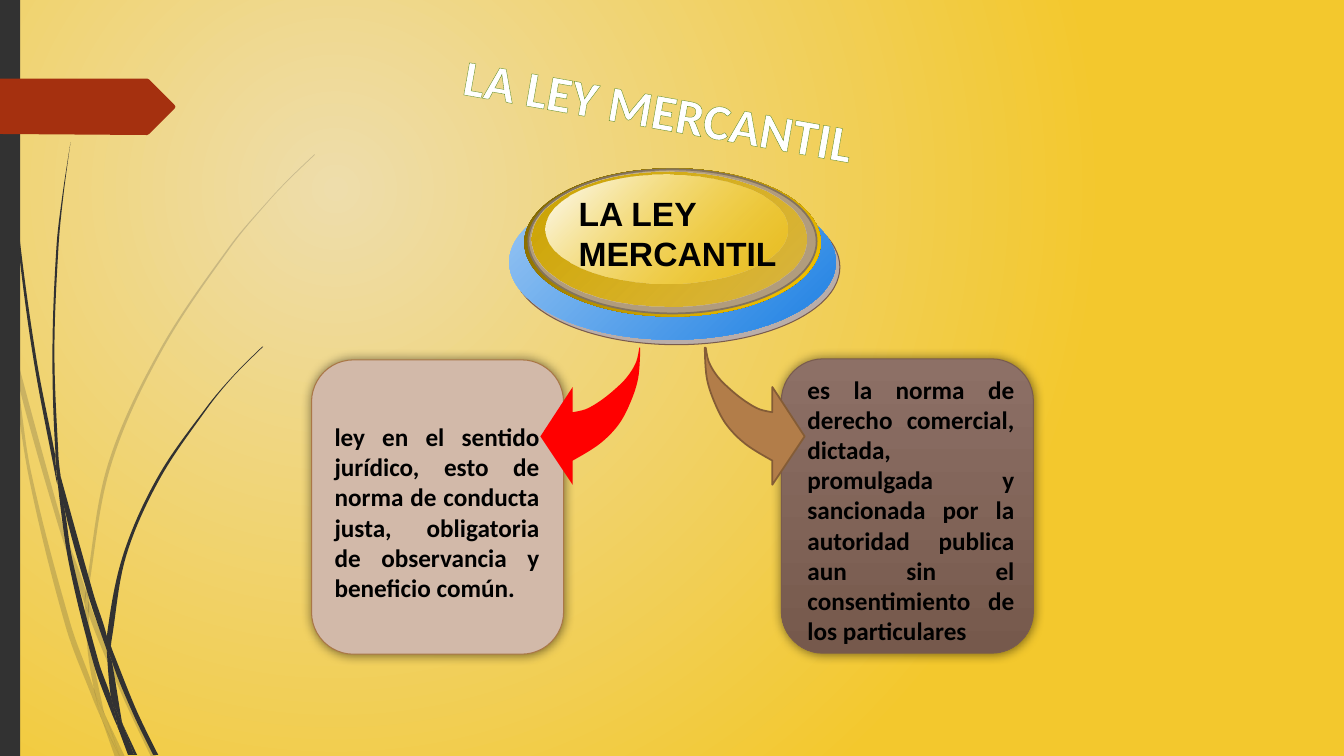
"""Build the slide about the mercantile law."""
from dataclasses import dataclass
from math import hypot

from lxml import etree
from pptx import Presentation, util as u
from pptx.dml.color import RGBColor
from pptx.enum import shapes, text
from pptx.oxml import parse_xml
from pptx.oxml.ns import nsdecls, qn

COLORS = {
    "cream": "EEDDAB", "yellow": "F3C82D", "charcoal": "323232", "rust": "A5300F",
    "white": "FFFFFF", "black": "000000", "lime": "BCF86A", "moss": "5F8A1E",
    "cocoa": "8D7066", "dark cocoa": "76594C", "cocoa line": "795B4E", "sand": "D2B9A9",
    "sand line": "AA7746", "red": "FF0000", "bronze": "B27D49", "bronze line": "845C36",
    "gray": "B9ADA9", "sky": "9BC7F3", "blue": "1D80E3", "olive": "765E00",
    "gold": "FFCC00", "tan": "B19C7D", "tan line": "83735C", "ochre": "CAA200",
}
PRESET = shapes.MSO_SHAPE
ALIGN = text.PP_ALIGN
ARROW_AXIS = 6.67
Point = tuple[float, float]


@dataclass(frozen=True)
class Paint:
    fill: tuple[str, ...]
    line: str = ""
    line_width: float = 0.75
    angle: int = 45
    opacity: int = 100


@dataclass(frozen=True)
class Box:
    left: float
    top: float
    width: float
    height: float

    def lengths(self) -> list[int]:
        return [u.Inches(v) for v in (self.left, self.top, self.width, self.height)]


@dataclass(frozen=True)
class Label:
    box: Box
    lines: tuple[str, ...]
    size: int
    font: str = "Calibri"
    color: str = "black"
    align: ALIGN = ALIGN.JUSTIFY
    wrap: bool = True
    rotation: float = 0


@dataclass(frozen=True)
class Card:
    box: Box
    paint: Paint
    label: Label


PALE_GRASS = (
    ((.11, 3.5), (.09, 3.22), (0, 2.82), (0, 2.99), (.1, 3.44)),
    ((.58, 5.22), (.84, 5.99), (.85, 5.86), (.62, 5.2), (.14, 3.45), (.17, 3.76)),
    ((.92, 6.07), (.88, 5.96), (.88, 6.1), (1.23, 6.94), (1.5, 7.51), (1.55, 7.51), (1.27, 6.92)),
    ((1.19, 7.51), (1.24, 7.51), (1.05, 7.11)),
    ((.93, 6.83), (.7, 6.19), (.31, 4.69), (.17, 3.76), (.11, 3.5), (.28, 4.7), (.65, 6.21),
     (.92, 6.93), (1.01, 7.14), (.99, 7.07)),
    ((.84, 5.99), (.87, 6.46), (.93, 6.83), (.96, 6.92), (1.05, 7.11), (1.03, 7.06), (.91, 6.46),
     (.88, 6.1), (.88, 6.08)),
    ((.88, 5.84), (1.1, 4.62), (1.6, 3.49), (2.29, 2.45), (2.68, 1.98), (2.9, 1.75), (3.12, 1.54),
     (3.12, 1.53), (2.89, 1.75), (2.68, 1.97), (2.28, 2.44), (1.58, 3.48), (1.07, 4.61),
     (.85, 5.84), (.85, 5.86), (.88, 5.96)),
    ((1.01, 7.14), (1.14, 7.51), (1.19, 7.51)),
    ((.88, 6.08), (.88, 6.1), (.88, 5.96), (.85, 5.86), (.84, 5.99)),
    ((.96, 6.92), (.93, 6.83), (.99, 7.07), (1.01, 7.14), (1.19, 7.51), (1.05, 7.11)),
)
DARK_GRASS = (
    ((.07, 1.1), (.17, 2.33), (.33, 3.55), (.56, 4.77), (.57, 4.81), (.55, 4.57), (.55, 4.53),
     (.36, 3.55), (.19, 2.32), (.08, 1.09), (.05, .48), (.04, 0), (.03, 0), (.04, .48)),
    ((.88, 5.92), (1.06, 6.45), (1.06, 6.31), (.93, 5.9), (.6, 4.72), (.64, 5.05)),
    ((1.13, 6.49), (1.1, 6.41), (1.11, 6.56), (1.32, 7.08), (1.52, 7.49), (1.57, 7.49),
     (1.36, 7.06)),
    ((1.1, 6.91), (.98, 6.57), (.72, 5.56), (.64, 5.05), (.57, 4.77), (.68, 5.57), (.93, 6.59),
     (1.11, 7.08), (1.17, 7.22), (1.16, 7.17)),
    ((.6, 4.72), (.58, 4.53), (.54, 3.49), (.58, 2.45), (.63, 1.93), (.7, 1.41), (.62, 1.93),
     (.56, 2.45), (.52, 3.49), (.55, 4.49)),
    ((1.33, 7.49), (1.36, 7.49), (1.22, 7.19)),
    ((.57, 4.77), (.64, 5.05), (.6, 4.72), (.55, 4.49), (.55, 4.53)),
    ((1.11, 6.33), (1.25, 5.52), (1.58, 4.76), (2.05, 4.06), (2.31, 3.74), (2.61, 3.44),
     (2.6, 3.44), (2.31, 3.73), (2.04, 4.05), (1.56, 4.74), (1.22, 5.51), (1.06, 6.31), (1.1, 6.41)),
    ((1.17, 7.22), (1.27, 7.49), (1.31, 7.49)),
    ((1.06, 6.45), (1.1, 6.91), (1.16, 7.06), (1.22, 7.19), (1.21, 7.16), (1.11, 6.56), (1.09, 6.51)),
    ((1.06, 6.45), (1.09, 6.51), (1.11, 6.56), (1.1, 6.41), (1.06, 6.31)),
    ((1.16, 7.06), (1.1, 6.91), (1.16, 7.17), (1.17, 7.22), (1.3, 7.49), (1.33, 7.49), (1.22, 7.19)),
)
TAG = ((1.74, 1.06), (1.73, 1.08), (1.48, 1.33), (1.46, 1.34), (0, 1.33), (0, .78), (1.46, .78),
       (1.48, .79), (1.73, 1.04))
LEFT_ARROW = (
    (6.35, 3.45), (6.33, 3.75), (6.25, 4), (6.13, 4.22), (5.94, 4.41), (5.68, 4.57), (5.68, 4.81),
    (5.36, 4.33), (5.68, 3.84), (5.68, 4.09), (5.81, 4.06), (5.95, 3.98), (6.09, 3.87),
    (6.22, 3.74), (6.31, 3.59), (6.34, 3.45))
RIGHT_ARROW = tuple((2 * ARROW_AXIS - x, y) for x, y in LEFT_ARROW)
TITLE = Label(Box(2.32, .73, 8.42, .71), ("LA LEY MERCANTIL",), 36, color="white",
              align=ALIGN.CENTER, rotation=10)
CARDS = (
    Card(Box(7.75, 3.56, 2.5, 2.92), Paint(("cocoa", "dark cocoa"), "cocoa line", angle=90),
         Label(Box(7.91, 3.66, 2.25, 2.83),
               ("es la norma de derecho comercial, dictada, promulgada y sancionada por la "
                "autoridad publica aun sin el consentimiento de los particulares",), 18)),
    Card(Box(3.09, 3.57, 2.5, 2.92), Paint(("sand",), "sand line"),
         Label(Box(3.22, 4.13, 2.23, 2.15),
               ("ley en el sentido jurídico, esto de norma de conducta justa, obligatoria "
                "de observancia y beneficio común.",), 18)),
)
BUTTON = (
    (Box(5.09, 1.88, 3.24, 1.54), Paint(("gray",), "cocoa line")),
    (Box(5.05, 1.83, 3.24, 1.54), Paint(("sky", "blue"))),
    (Box(5.2, 1.67, 2.94, 1.47), Paint(("olive", "gold"))),
    (Box(5.24, 1.68, 2.86, 1.43), Paint(("tan",), "tan line", 1.25)),
    (Box(5.27, 1.7, 2.73, 1.34), Paint(("ochre", "gold"), opacity=48)),
    (Box(5.41, 1.73, 2.4, 1.08), Paint(("white", "gold"), opacity=38)),
)
BUTTON_LABEL = Label(Box(5.64, 1.86, 2.18, 1.14), ("LA LEY", "MERCANTIL"), 24, "Arial",
                     align=ALIGN.LEFT, wrap=False)


def rgb(name: str) -> RGBColor:
    return RGBColor.from_string(COLORS[name])


def set_gradient(fill, names: tuple[str, ...]) -> None:
    fill.gradient()
    for stop, name in zip(fill.gradient_stops, names):
        stop.color.rgb = rgb(name)


def apply_paint(shape, paint: Paint) -> None:
    shape.shadow.inherit = False
    if len(paint.fill) > 1:
        set_gradient(shape.fill, paint.fill)
        shape.fill.gradient_angle = 360 - paint.angle
    else:
        shape.fill.solid()
        shape.fill.fore_color.rgb = rgb(paint.fill[0])
    if paint.opacity < 100:
        last_color = shape.element.xpath("./p:spPr//a:srgbClr")[-1]
        etree.SubElement(last_color, qn("a:alpha")).set("val", str(paint.opacity * 1000))
    if paint.line:
        shape.line.color.rgb = rgb(paint.line)
        shape.line.width = u.Pt(paint.line_width)
    else:
        shape.line.fill.background()


def add_preset(slide, preset: PRESET, box: Box, paint: Paint):
    shape = slide.shapes.add_shape(preset, *box.lengths())
    apply_paint(shape, paint)
    return shape


def handle(before: Point, here: Point, after: Point, sign: int) -> Point:
    """Return the control point beside an anchor; sharp corners get none."""
    (ax, ay), (bx, by) = ((here[k] - before[k] for k in (0, 1)), (after[k] - here[k] for k in (0, 1)))
    back, ahead = hypot(ax, ay), hypot(bx, by)
    if ax * bx + ay * by < 0.7 * back * ahead:
        return here
    reach = sign * (ahead if sign > 0 else back) / 3 / hypot(ax + bx, ay + by)
    return here[0] + reach * (ax + bx), here[1] + reach * (ay + by)


def add_outline(slide, points: tuple[Point, ...], paint: Paint, curved: bool = True) -> None:
    corners = [(u.Inches(x), u.Inches(y)) for x, y in points]
    builder = slide.shapes.build_freeform(*corners[0])
    builder.add_line_segments(corners[1:] + corners[:1], close=True)
    shape = builder.convert_to_shape()
    apply_paint(shape, paint)
    segments = shape.element.xpath(".//a:path/a:lnTo") if curved else []
    left, top, count = shape.left, shape.top, len(corners)
    for i, segment in enumerate(segments):
        before, start, end, after = (corners[(i + k) % count] for k in (-1, 0, 1, 2))
        controls = handle(before, start, end, 1), handle(start, end, after, -1), end
        curve = "".join(f'<a:pt x="{round(x - left)}" y="{round(y - top)}"/>' for x, y in controls)
        segment.getparent().replace(segment, parse_xml(
            f'<a:cubicBezTo {nsdecls("a")}>{curve}</a:cubicBezTo>'))


def add_label(slide, label: Label):
    shape = slide.shapes.add_textbox(*label.box.lengths())
    shape.rotation = label.rotation
    frame = shape.text_frame
    frame.text = "\n".join(label.lines)
    frame.word_wrap = label.wrap
    frame.auto_size = text.MSO_AUTO_SIZE.SHAPE_TO_FIT_TEXT
    for paragraph in frame.paragraphs:
        paragraph.alignment = label.align
        font = paragraph.runs[0].font
        font.name, font.size, font.bold = label.font, u.Pt(label.size), True
        font.color.rgb = rgb(label.color)
    return shape


def add_title(slide) -> None:
    properties = add_label(slide, TITLE).element.xpath(".//a:rPr")[0]
    stops = "".join(f'<a:gs pos="{position}"><a:srgbClr val="{COLORS[name]}"/></a:gs>'
                    for position, name in ((0, "lime"), (75000, "moss"), (100000, "lime")))
    properties.insert(0, parse_xml(
        f'<a:ln {nsdecls("a")} w="{u.Pt(2.48)}"><a:gradFill><a:gsLst>{stops}</a:gsLst>'
        '<a:lin ang="5400000"/></a:gradFill></a:ln>'))


def add_card(slide, card: Card) -> None:
    shape = add_preset(slide, PRESET.ROUNDED_RECTANGLE, card.box, card.paint)
    shape.element.xpath("./p:spPr/a:effectLst")[0].append(parse_xml(
        f'<a:outerShdw {nsdecls("a")} blurRad="{u.Pt(7.5)}" dist="0" dir="0">'
        f'<a:srgbClr val="{COLORS["black"]}"><a:alpha val="50000"/></a:srgbClr></a:outerShdw>'))
    add_label(slide, card.label)


def set_background(slide) -> None:
    set_gradient(slide.background.fill, ("cream", "yellow"))
    linear = slide.element.xpath(".//p:bg//a:lin")[0]
    linear.getparent().replace(linear, parse_xml(
        f'<a:path {nsdecls("a")} path="circle">'
        '<a:fillToRect l="50000" t="50000" r="100000" b="100000"/></a:path>'))


def main() -> None:
    presentation = Presentation()
    presentation.slide_width, presentation.slide_height = u.Inches(13.33), u.Inches(7.5)
    slide = presentation.slides.add_slide(presentation.slide_layouts[6])
    set_background(slide)
    for grass, opacity in ((PALE_GRASS, 20), (DARK_GRASS, 100)):
        for blade in grass:
            add_outline(slide, blade, Paint(("charcoal",), opacity=opacity))
    add_preset(slide, PRESET.RECTANGLE, Box(0, 0, .2, 7.5), Paint(("charcoal",)))
    add_outline(slide, TAG, Paint(("rust",)), curved=False)
    add_title(slide)
    for card in CARDS:
        add_card(slide, card)
    add_outline(slide, LEFT_ARROW, Paint(("red",)))
    add_outline(slide, RIGHT_ARROW, Paint(("bronze",), "bronze line", 1.25))
    for box, paint in BUTTON:
        add_preset(slide, PRESET.OVAL, box, paint)
    add_label(slide, BUTTON_LABEL)
    presentation.save("out.pptx")


if __name__ == "__main__":
    main()
